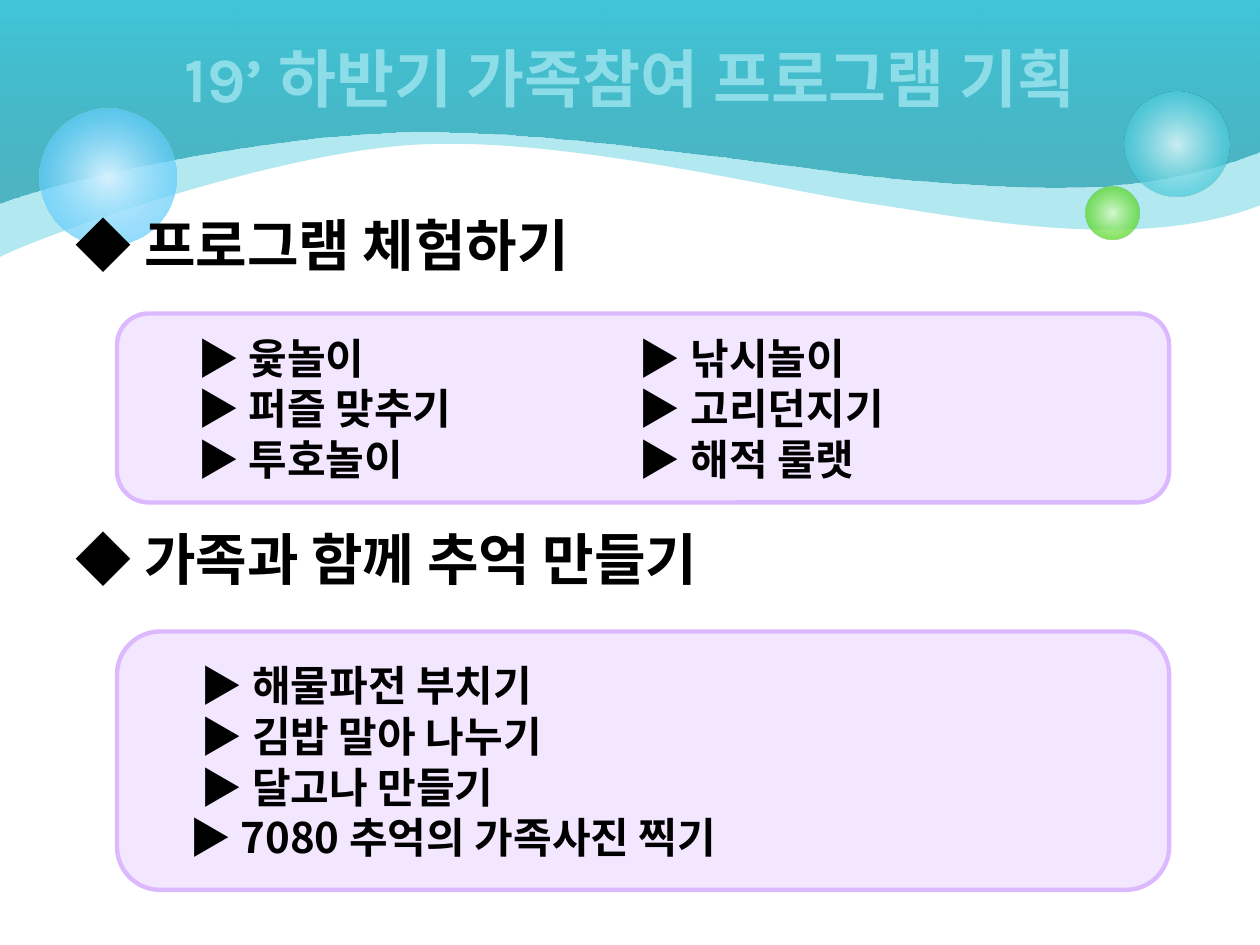
"""Build the slide that plans the family participation programme."""
from lxml import etree
from pptx import Presentation
from pptx.dml.color import RGBColor
from pptx.enum.shapes import MSO_SHAPE as Shape
from pptx.enum.text import MSO_ANCHOR as Anchor, PP_ALIGN as Align
from pptx.oxml.ns import qn
from pptx.util import Cm, Pt

TEAL = RGBColor(0x40, 0xC6, 0xD8)
DEEP_TEAL = RGBColor(0x24, 0x9E, 0xAE)
PALE_TEAL = RGBColor(0xD9, 0xF4, 0xF7)
GREEN = RGBColor(0x4C, 0xD4, 0x16)
PALE_GREEN = RGBColor(0xDA, 0xFA, 0xCD)
BLUE = RGBColor(0x33, 0xBD, 0xFB)
PALE_BLUE = RGBColor(0xD6, 0xF2, 0xFE)
TITLE_TEAL = RGBColor(0x8C, 0xDD, 0xE8)
LILAC = RGBColor(0xF3, 0xE7, 0xFF)
LILAC_EDGE = RGBColor(0xDC, 0xB8, 0xFF)
BLACK = RGBColor(0, 0, 0)
KOREAN = "Noto Sans CJK KR"


def paint_gradient(shape, stops, radial):
    """Fill a shape with (percent, colour, opacity) stops and no outline."""
    shape.shadow.inherit = False
    shape.line.fill.background()
    shape.fill.background()
    blank = shape.element.spPr.find(qn("a:noFill"))
    gradient = etree.Element(qn("a:gradFill"), rotWithShape="1")
    stop_list = etree.SubElement(gradient, qn("a:gsLst"))
    for percent, color, opacity in stops:
        stop = etree.SubElement(stop_list, qn("a:gs"), pos=str(percent * 1000))
        tone = etree.SubElement(stop, qn("a:srgbClr"), val=str(color))
        etree.SubElement(tone, qn("a:alpha"), val=str(opacity * 1000))
    if radial:
        circle = etree.SubElement(gradient, qn("a:path"), path="circle")
        etree.SubElement(circle, qn("a:fillToRect"), l="50000", t="50000", r="50000", b="50000")
    else:
        etree.SubElement(gradient, qn("a:lin"), ang=str(270 * 60000), scaled="0")
    blank.getparent().replace(blank, gradient)


def write(para, text, size, color, font_name=KOREAN):
    """Put bold text into a paragraph."""
    para.text = text
    para.font.name = font_name
    para.font.size = Pt(size)
    para.font.bold = True
    para.font.color.rgb = color


deck = Presentation()
deck.slide_width, deck.slide_height = Cm(25.4), Cm(19.05)
slide = deck.slides.add_slide(deck.slide_layouts[5])
shapes = slide.shapes

waves = [
    ([(0, 5.18), (0.84, 4.75), (5.44, 3.1), (8.33, 2.92), (11.25, 2.74),
      (15.39, 3.76), (17.45, 4.09), (19.51, 4.39), (22.91, 5.11), (25.4, 4.14)],
     [(0, TEAL, 40), (100, TEAL, 40)]),
    ([(0, 4.11), (1.14, 3.66), (5.16, 2.74), (8.28, 2.67), (11.4, 2.59),
      (16.71, 3.53), (18.72, 3.66), (20.73, 3.78), (22.91, 4.04), (25.4, 3.07)],
     [(0, DEEP_TEAL, 69), (100, TEAL, 100)]),
]
for edge, stops in waves:
    builder = shapes.build_freeform(0, 0, scale=1.0)
    builder.add_line_segments([(Cm(x), Cm(y)) for x, y in edge + [(25.43, 0)]], close=True)
    wave = builder.convert_to_shape()
    lines = list(wave.element.iter(qn("a:lnTo")))[1:len(edge)]
    for first in range(0, len(lines), 3):
        curve = etree.Element(qn("a:cubicBezTo"))
        lines[first].addprevious(curve)
        for line in lines[first:first + 3]:
            curve.append(line[0])
            line.getparent().remove(line)
    paint_gradient(wave, stops, radial=False)

bubbles = [
    (22.68, 1.85, 2.11, [(0, PALE_TEAL, 90), (76, TEAL, 70)]),
    (21.89, 3.76, 1.07, [(0, PALE_GREEN, 90), (76, GREEN, 70)]),
    (0.79, 2.18, 2.77, [(0, PALE_BLUE, 100), (100, BLUE, 54)]),
]
for left, top, size, stops in bubbles:
    bubble = shapes.add_shape(Shape.OVAL, Cm(left), Cm(top), Cm(size), Cm(size))
    paint_gradient(bubble, stops, radial=True)

sections = [
    ("◆ 프로그램 체험하기", 4.11, 6.32, 3.81,
     [["▶ 윷놀이", "▶ 퍼즐 맞추기", "▶ 투호놀이"],
      ["▶ 낚시놀이", "▶ 고리던지기", "▶ 해적 룰랫"]]),
    ("◆ 가족과 함께 추억 만들기", 10.44, 12.73, 5.21,
     [["▶ 해물파전 부치기", "▶ 김밥 말아 나누기", "▶ 달고나 만들기",
       "▶ 7080 추억의 가족사진 찍기"]]),
]
for heading, heading_top, panel_top, panel_height, columns in sections:
    box = shapes.add_textbox(Cm(1.27), Cm(heading_top), Cm(22.86), Cm(2))
    box.text_frame.word_wrap = True
    write(box.text_frame.paragraphs[0], heading, 32, BLACK)

    panel = shapes.add_shape(
        Shape.ROUNDED_RECTANGLE, Cm(2.36), Cm(panel_top), Cm(21.21), Cm(panel_height))
    panel.shadow.inherit = False
    panel.fill.solid()
    panel.fill.fore_color.rgb = LILAC
    panel.line.color.rgb = LILAC_EDGE
    panel.line.width = Pt(2.5)
    holders = [panel]
    if len(columns) > 1:
        holders.append(shapes.add_textbox(Cm(11.45), Cm(panel_top), Cm(11), Cm(panel_height)))
    for holder, items in zip(holders, columns):
        frame = holder.text_frame
        frame.word_wrap = True
        frame.vertical_anchor = Anchor.MIDDLE
        for number, item in enumerate(items):
            para = frame.add_paragraph() if number else frame.paragraphs[0]
            write(para, item, 24, BLACK)
            para.alignment = Align.LEFT
            para.line_spacing = Pt(29)
            indent = Cm(0.95) if item[2].isdigit() else Cm(1.18)
            holder.element.findall(".//" + qn("a:pPr"))[-1].set("indent", str(indent))

title = shapes.title
title.left, title.top, title.width, title.height = Cm(1.27), Cm(0), Cm(22.86), Cm(3.12)
title.text_frame.vertical_anchor = Anchor.MIDDLE
write(title.text_frame.paragraphs[0], "19’ 하반기 가족참여 프로그램 기획", 36, TITLE_TEAL, "Karla")
title.text_frame.paragraphs[0].alignment = Align.CENTER
title.element.getparent().append(title.element)

for latin in list(slide.element.iter(qn("a:latin"))):
    latin.addnext(etree.Element(qn("a:ea"), typeface=KOREAN))

deck.save("out.pptx")
